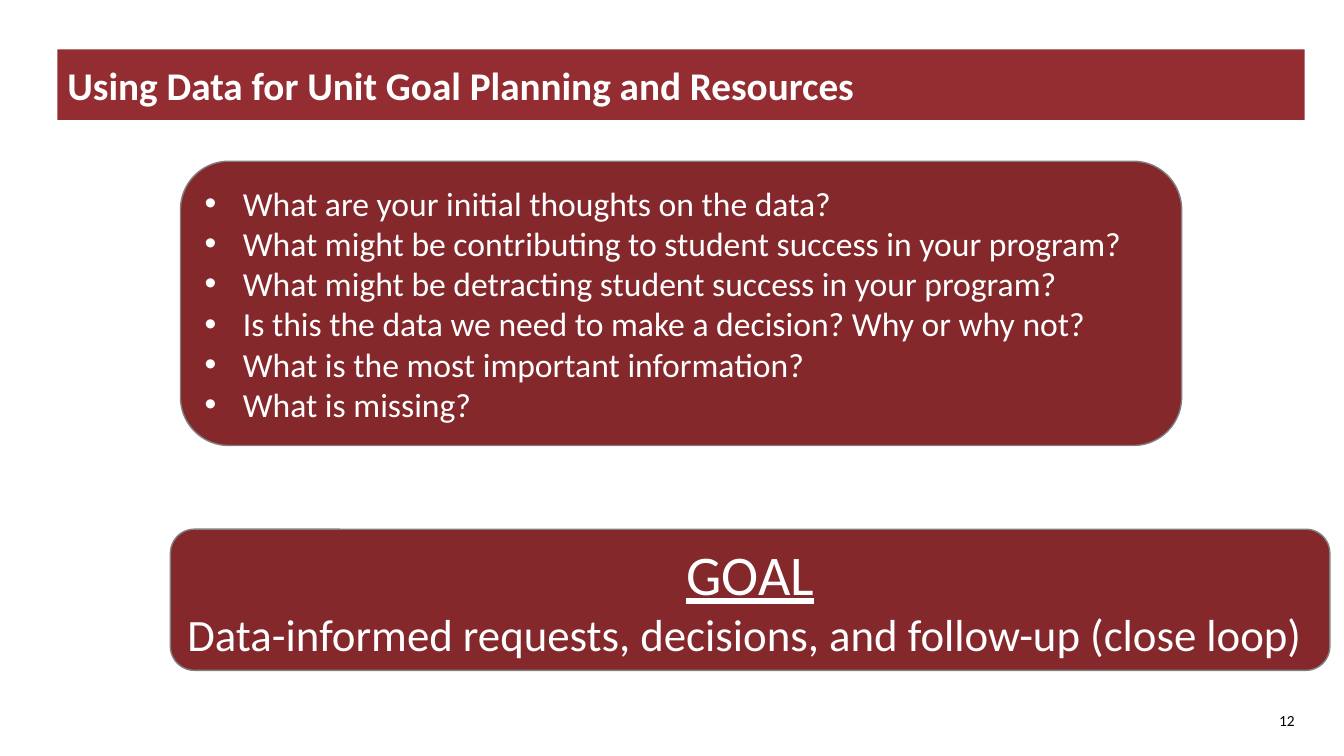
from lxml import etree
from pptx import Presentation, util as u
from pptx.dml.color import RGBColor
from pptx.enum import shapes, text
from pptx.oxml.ns import qn

BANNER_RED = RGBColor(0x93, 0x2D, 0x32)
CALLOUT_RED = RGBColor(0x84, 0x28, 0x2C)
GRAY = RGBColor(0x80, 0x80, 0x80)
WHITE = RGBColor(0xFF, 0xFF, 0xFF)
BLACK = RGBColor(0, 0, 0)
LEFT, CENTER, RIGHT = text.PP_ALIGN.LEFT, text.PP_ALIGN.CENTER, text.PP_ALIGN.RIGHT

QUESTIONS = [
    "What are your initial thoughts on the data?",
    "What might be contributing to student success in your program?",
    "What might be detracting student success in your program?",
    "Is this the data we need to make a decision? Why or why not?",
    "What is the most important information?",
    "What is missing?",
]


class SlideBuilder:
    """Draw styled elements on one slide, placed in percent of its size."""

    def __init__(self, deck):
        self.deck = deck
        self.page = deck.slides.add_slide(deck.slide_layouts[6])
        self.style = {"name": "Calibri"}

    def area(self, left, top, width, height):
        across, down = self.deck.slide_width / 100, self.deck.slide_height / 100
        return [int(n) for n in (left * across, top * down, width * across, height * down)]

    def add_line(self, box, line, first=False, align=LEFT, color=WHITE, bullet=False, **formats):
        frame = box.text_frame
        frame.word_wrap = True
        frame.vertical_anchor = text.MSO_ANCHOR.MIDDLE
        para = frame.paragraphs[0] if first else frame.add_paragraph()
        para.alignment = align
        if bullet:
            props = para._p.get_or_add_pPr()
            indent = u.Inches(0.38)
            props.set("marL", str(indent))
            props.set("indent", str(-indent))
            etree.SubElement(props, qn("a:buFont")).set("typeface", "Arial")
            etree.SubElement(props, qn("a:buChar")).set("char", "•")
        span = para.add_run()
        span.text = line
        for key, value in {**self.style, **formats}.items():
            setattr(span.font, key, value)
        span.font.color.rgb = color

    def panel(self, kind, place, fill):
        box = self.page.shapes.add_shape(kind, *self.area(*place))
        box.shadow.inherit = False
        box.fill.solid()
        box.fill.fore_color.rgb = fill
        box.line.fill.background()
        return box

    def banner(self, place, line):
        box = self.panel(shapes.MSO_SHAPE.RECTANGLE, place, BANNER_RED)
        self.add_line(box, line, first=True, size=u.Pt(28), bold=True)

    def callout(self, place):
        box = self.panel(shapes.MSO_SHAPE.ROUNDED_RECTANGULAR_CALLOUT, place, CALLOUT_RED)
        for index, value in enumerate((-0.24, 0.5, 0.17)):
            box.adjustments[index] = value
        box.line.color.rgb = GRAY
        box.line.width = u.Pt(1)
        return box

    def bullets(self, place, lines):
        box = self.callout(place)
        for index, line in enumerate(lines):
            self.add_line(box, line, first=index == 0, bullet=True, size=u.Pt(24))

    def goal(self, place, heading, line):
        box = self.callout(place)
        self.add_line(box, heading, first=True, align=CENTER, size=u.Pt(40), underline=True)
        self.add_line(box, line, size=u.Pt(32))

    def page_number(self, place, number):
        box = self.page.shapes.add_textbox(*self.area(*place))
        self.add_line(box, number, first=True, align=RIGHT, color=BLACK, size=u.Pt(11))


def main():
    deck = Presentation()
    deck.slide_width, deck.slide_height = u.Inches(13.33), u.Inches(7.5)
    slide = SlideBuilder(deck)
    slide.banner((4.28, 6.53, 92.8, 9.33), "Using Data for Unit Goal Planning and Resources")
    slide.page_number((70.22, 92.67, 26.86, 5.33), "12")
    slide.bullets((13.43, 21.33, 74.49, 37.6), QUESTIONS)
    slide.goal((12.68, 70, 86.27, 18.67), "GOAL",
               "Data-informed requests, decisions, and follow-up (close loop)")
    deck.save("out.pptx")


if __name__ == "__main__":
    main()
